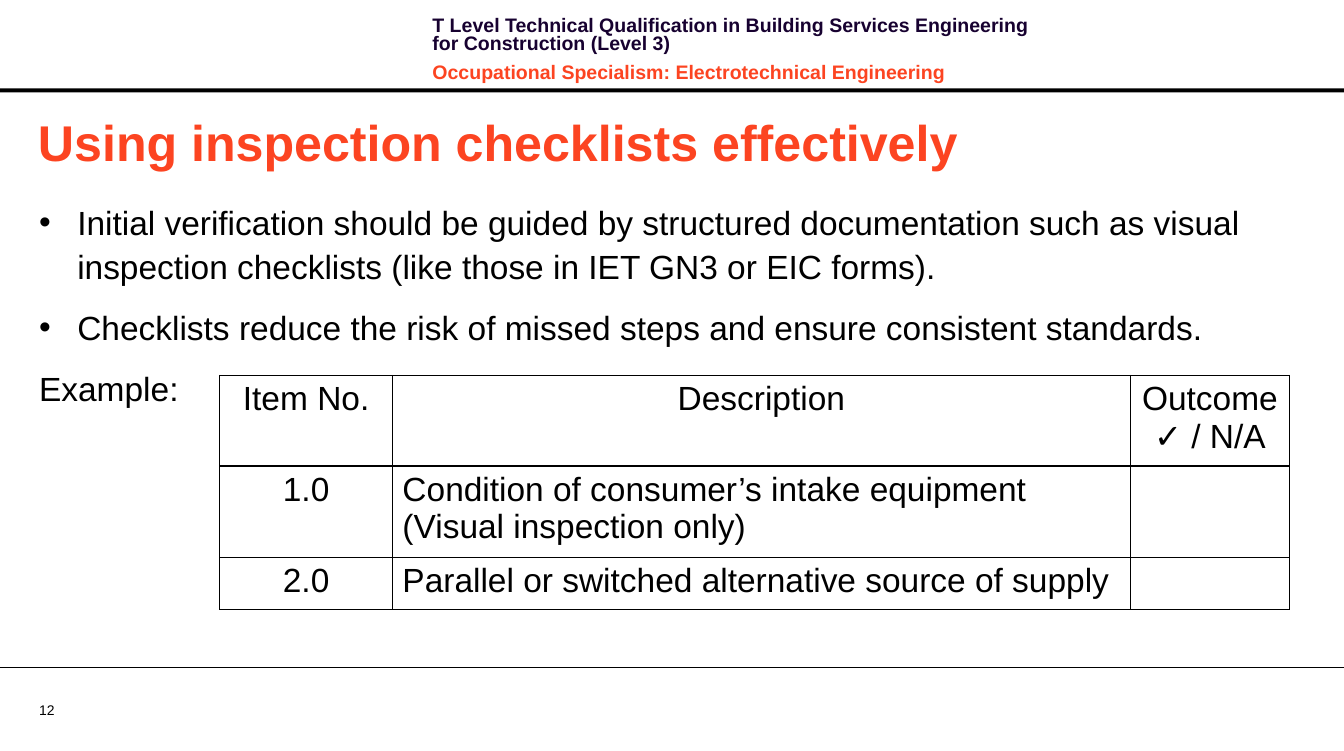
import dataclasses

import pptx
import pptx.dml.color
import pptx.enum.shapes
import pptx.enum.text
import pptx.oxml
import pptx.oxml.ns
import pptx.util

Inches = pptx.util.Inches
Pt = pptx.util.Pt
ALIGN = pptx.enum.text.PP_ALIGN
ANCHOR = pptx.enum.text.MSO_ANCHOR


@dataclasses.dataclass(frozen=True)
class Theme:
    font: str = "Arial"
    black: str = "000000"
    white: str = "FFFFFF"
    navy: str = "170130"
    orange: str = "FC4421"
    title_size: int = 36
    body_size: int = 24
    header_size: int = 14
    number_size: int = 10


THEME = Theme()
SLIDE_WIDTH = 13.39
BULLET_INDENT = 0.38

HEADER = [
    ("T Level Technical Qualification in Building Services Engineering "
     "for Construction (Level 3)", THEME.navy),
    ("Occupational Specialism: Electrotechnical Engineering", THEME.orange),
]
BODY = [
    ("Initial verification should be guided by structured documentation such as visual "
     "inspection checklists (like those in IET GN3 or EIC forms).", True),
    ("Checklists reduce the risk of missed steps and ensure consistent standards.", True),
    ("Example:", False),
]
COLUMN_WIDTHS = [1.72, 7.35, 1.59]
ROW_HEIGHTS = [0.84, 0.91, 0.52]
CHECKLIST = [
    ["Item No.", "Description", "Outcome\n✓ / N/A"],
    ["1.0", "Condition of consumer’s intake equipment (Visual inspection only)", ""],
    ["2.0", "Parallel or switched alternative source of supply", ""],
]


def rgb(color):
    return pptx.dml.color.RGBColor.from_string(color)


def write(paragraph, text, size, color=THEME.black, bold=False):
    run = paragraph.add_run()
    run.text = text
    run.font.name = THEME.font
    run.font.size = Pt(size)
    run.font.bold = bold
    run.font.color.rgb = rgb(color)


def add_frame(slide, box, inset=(0.1, 0.05), anchor=ANCHOR.TOP):
    frame = slide.shapes.add_textbox(*map(Inches, box)).text_frame
    frame.word_wrap = True
    frame.vertical_anchor = anchor
    frame.margin_left = frame.margin_right = Inches(inset[0])
    frame.margin_top = frame.margin_bottom = Inches(inset[1])
    return frame


def next_paragraph(frame, index):
    return frame.add_paragraph() if index else frame.paragraphs[0]


def add_bullet(paragraph):
    properties = paragraph._p.get_or_add_pPr()
    properties.set("marL", str(Inches(BULLET_INDENT)))
    properties.set("indent", str(-Inches(BULLET_INDENT)))
    namespace = pptx.oxml.ns.nsdecls("a")
    properties.append(pptx.oxml.parse_xml(f'<a:buFont {namespace} typeface="{THEME.font}"/>'))
    properties.append(pptx.oxml.parse_xml(f'<a:buChar {namespace} char="•"/>'))


def add_header(slide):
    frame = add_frame(slide, (4.21, 0.13, 6.37, 0.64))
    for index, (text, color) in enumerate(HEADER):
        paragraph = next_paragraph(frame, index)
        paragraph.line_spacing = Pt(13.1)
        paragraph.space_before = Pt(4 if index else 0)
        paragraph.space_after = Pt(4)
        write(paragraph, text, THEME.header_size, color, bold=True)


def add_header_bar(slide):
    bar = slide.shapes.add_shape(
        pptx.enum.shapes.MSO_SHAPE.RECTANGLE,
        Inches(0), Inches(0.88), Inches(SLIDE_WIDTH), Inches(0.04))
    bar.shadow.inherit = False
    bar.fill.solid()
    bar.fill.fore_color.rgb = rgb(THEME.black)
    bar.line.fill.background()


def add_footer_rule(slide):
    rule = slide.shapes.add_connector(
        pptx.enum.shapes.MSO_CONNECTOR.STRAIGHT,
        Inches(0), Inches(6.65), Inches(SLIDE_WIDTH), Inches(6.65))
    rule.line.color.rgb = rgb(THEME.black)
    rule.line.width = Pt(0.75)
    rule._element.spPr.append(
        pptx.oxml.parse_xml(f'<a:effectLst {pptx.oxml.ns.nsdecls("a")}/>'))


def add_body(slide):
    frame = add_frame(slide, (0.39, 1.97, 12.03, 4.53), inset=(0, 0))
    for index, (text, bulleted) in enumerate(BODY):
        paragraph = next_paragraph(frame, index)
        if bulleted:
            add_bullet(paragraph)
        paragraph.line_spacing = 1.1
        paragraph.space_after = Pt(12)
        write(paragraph, text, THEME.body_size)


def add_borders(cell):
    properties = cell._tc.get_or_add_tcPr()
    for index, side in enumerate(("lnL", "lnR", "lnT", "lnB")):
        properties.insert(index, pptx.oxml.parse_xml(
            f'<a:{side} {pptx.oxml.ns.nsdecls("a")} w="{Pt(1)}"><a:solidFill>'
            f'<a:srgbClr val="{THEME.black}"/></a:solidFill></a:{side}>'))


def fill_cell(cell, text, alignment):
    cell.fill.solid()
    cell.fill.fore_color.rgb = rgb(THEME.white)
    add_borders(cell)
    if not text:
        return
    for index, line in enumerate(text.split("\n")):
        paragraph = next_paragraph(cell.text_frame, index)
        paragraph.alignment = alignment
        write(paragraph, line, THEME.body_size)


def add_checklist(slide):
    checklist = slide.shapes.add_table(
        len(ROW_HEIGHTS), len(COLUMN_WIDTHS), Inches(2.19), Inches(3.74),
        Inches(sum(COLUMN_WIDTHS)), Inches(sum(ROW_HEIGHTS))).table
    checklist.first_row = False
    checklist.horz_banding = False
    for column, width in zip(checklist.columns, COLUMN_WIDTHS):
        column.width = Inches(width)
    for row, height in zip(checklist.rows, ROW_HEIGHTS):
        row.height = Inches(height)
    for r, entries in enumerate(CHECKLIST):
        for c, text in enumerate(entries):
            is_description = r > 0 and c == 1
            fill_cell(checklist.cell(r, c), text,
                      ALIGN.LEFT if is_description else ALIGN.CENTER)


def main():
    deck = pptx.Presentation()
    deck.slide_width = Inches(SLIDE_WIDTH)
    deck.slide_height = Inches(7.48)
    slide = deck.slides.add_slide(deck.slide_layouts[6])

    page_number = add_frame(slide, (0.39, 6.99, 0.64, 0.17), (0, 0), ANCHOR.MIDDLE)
    write(page_number.paragraphs[0], "12", THEME.number_size)
    add_footer_rule(slide)
    add_header_bar(slide)
    add_header(slide)
    title = add_frame(slide, (0.28, 1.05, 12.72, 0.71), anchor=ANCHOR.MIDDLE)
    write(title.paragraphs[0], "Using inspection checklists effectively",
          THEME.title_size, THEME.orange, bold=True)
    add_body(slide)
    add_checklist(slide)
    deck.save("out.pptx")


if __name__ == "__main__":
    main()
